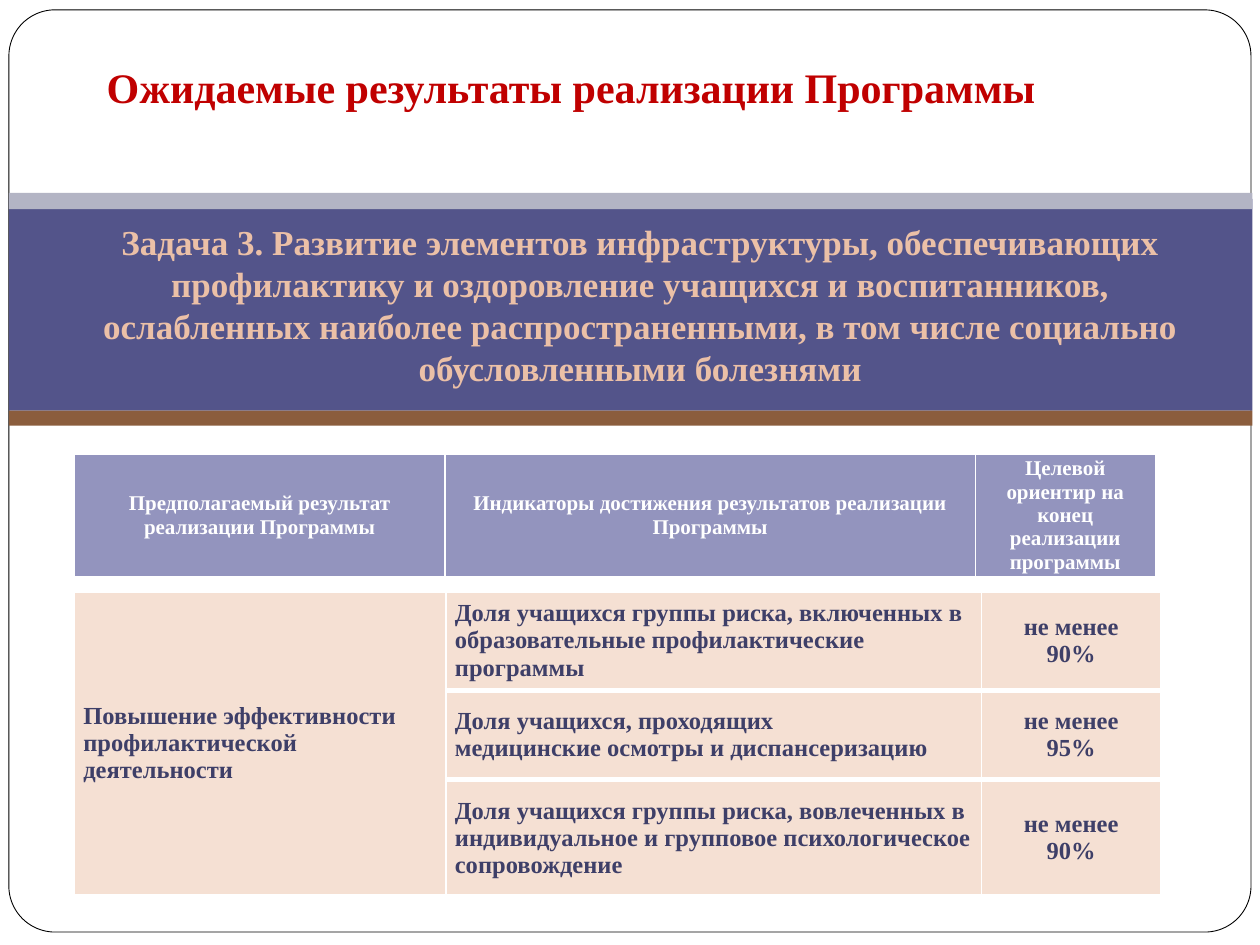
from lxml.etree import SubElement
from pptx import Presentation
from pptx.dml.color import RGBColor
from pptx.enum.shapes import MSO_SHAPE
from pptx.enum.text import MSO_ANCHOR, PP_ALIGN
from pptx.oxml.ns import qn
from pptx.util import Cm, Pt


def write_text(text_frame, text, size, color, alignment):
    text_frame.text = text
    text_frame.word_wrap = True
    for paragraph in text_frame.paragraphs:
        paragraph.alignment = alignment
        for run in paragraph.runs:
            run.font.name = "Times New Roman"
            run.font.size = Pt(size)
            run.font.bold = True
            run.font.color.rgb = RGBColor.from_string(color)


def add_filled_table(top, widths, heights, rows, fill, size, color, alignments):
    frame = slide.shapes.add_table(len(heights), len(widths), Cm(1.5), Cm(top),
                                   Cm(sum(widths)), Cm(sum(heights)))
    table = frame.table
    table.first_row = False
    table.horz_banding = False
    for column, width in zip(table.columns, widths):
        column.width = Cm(width)
    for row, height, texts in zip(table.rows, heights, rows):
        row.height = Cm(height)
        for cell, text, alignment in zip(row.cells, texts, alignments):
            write_text(cell.text_frame, text, size, color, alignment)
            cell.vertical_anchor = MSO_ANCHOR.MIDDLE
            cell.margin_left = cell.margin_right = Cm(0.18)
            cell.margin_top = cell.margin_bottom = 0
            properties = cell._tc.get_or_add_tcPr()
            for side, weight in (("L", 1), ("R", 1), ("T", 3), ("B", 3)):
                border = SubElement(properties, qn(f"a:ln{side}"), w=str(Pt(weight)))
                border_fill = SubElement(border, qn("a:solidFill"))
                SubElement(border_fill, qn("a:srgbClr"), val="FFFFFF")
            cell.fill.solid()
            cell.fill.fore_color.rgb = RGBColor.from_string(fill)
    return table


presentation = Presentation()
presentation.slide_width = Cm(25.4)
presentation.slide_height = Cm(19.05)
slide = presentation.slides.add_slide(presentation.slide_layouts[6])

panels = [
    (MSO_SHAPE.ROUNDED_RECTANGLE, 0.2, 25.04, 18.59, "FFFFFF"),
    (MSO_SHAPE.RECTANGLE, 4.01, 25.07, 4.27, "53548A"),
    (MSO_SHAPE.RECTANGLE, 3.89, 25.07, 0.33, "B3B4C4"),
    (MSO_SHAPE.RECTANGLE, 8.28, 25.07, 0.3, "8B5D3D"),
]
for kind, top, width, height, fill in panels:
    shape = slide.shapes.add_shape(kind, Cm(0.18), Cm(top), Cm(width), Cm(height))
    shape.shadow.inherit = False
    shape.fill.solid()
    shape.fill.fore_color.rgb = RGBColor.from_string(fill)
    if kind == MSO_SHAPE.ROUNDED_RECTANGLE:
        shape.adjustments[0] = 0.05
        shape.line.color.rgb = RGBColor.from_string("000000")
        shape.line.width = Pt(0.5)
    else:
        shape.line.fill.background()

task = ("Задача 3. Развитие элементов инфраструктуры, обеспечивающих профилактику "
        "и оздоровление учащихся и воспитанников, ослабленных наиболее "
        "распространенными, в том числе социально обусловленными болезнями")
text_boxes = [
    (1.5, 4.32, 22.81, 3.68, task, 20, "EBC0A7", PP_ALIGN.CENTER),
    (1.9, 1.12, 22.4, 1.27, "Ожидаемые результаты реализации Программы",
     24, "C00000", PP_ALIGN.LEFT),
]
for left, top, width, height, text, size, color, alignment in text_boxes:
    text_box = slide.shapes.add_textbox(Cm(left), Cm(top), Cm(width), Cm(height))
    write_text(text_box.text_frame, text, size, color, alignment)

headings = [
    "Предполагаемый результат реализации Программы",
    "Индикаторы достижения результатов реализации Программы",
    "Целевой ориентир на конец реализации программы",
]
add_filled_table(9.12, [7.47, 10.69, 3.63], [2.45], [headings],
                 "9394BE", 12, "FFFFFF", [PP_ALIGN.CENTER] * 3)

results = [
    ("Повышение эффективности профилактической деятельности",
     "Доля учащихся группы риска, включенных в образовательные профилактические программы",
     "не менее\n90%"),
    ("",
     "Доля учащихся, проходящих\nмедицинские осмотры и диспансеризацию",
     "не менее\n95%"),
    ("",
     "Доля учащихся группы риска, вовлеченных в индивидуальное и групповое "
     "психологическое сопровождение",
     "не менее\n90%"),
]
results_table = add_filled_table(11.91, [7.49, 10.8, 3.61], [2.01, 1.8, 2.34], results,
                                 "F5E0D3", 14, "3E3F68",
                                 [PP_ALIGN.LEFT, PP_ALIGN.LEFT, PP_ALIGN.CENTER])
results_table.cell(0, 0).merge(results_table.cell(2, 0))

presentation.save("out.pptx")
